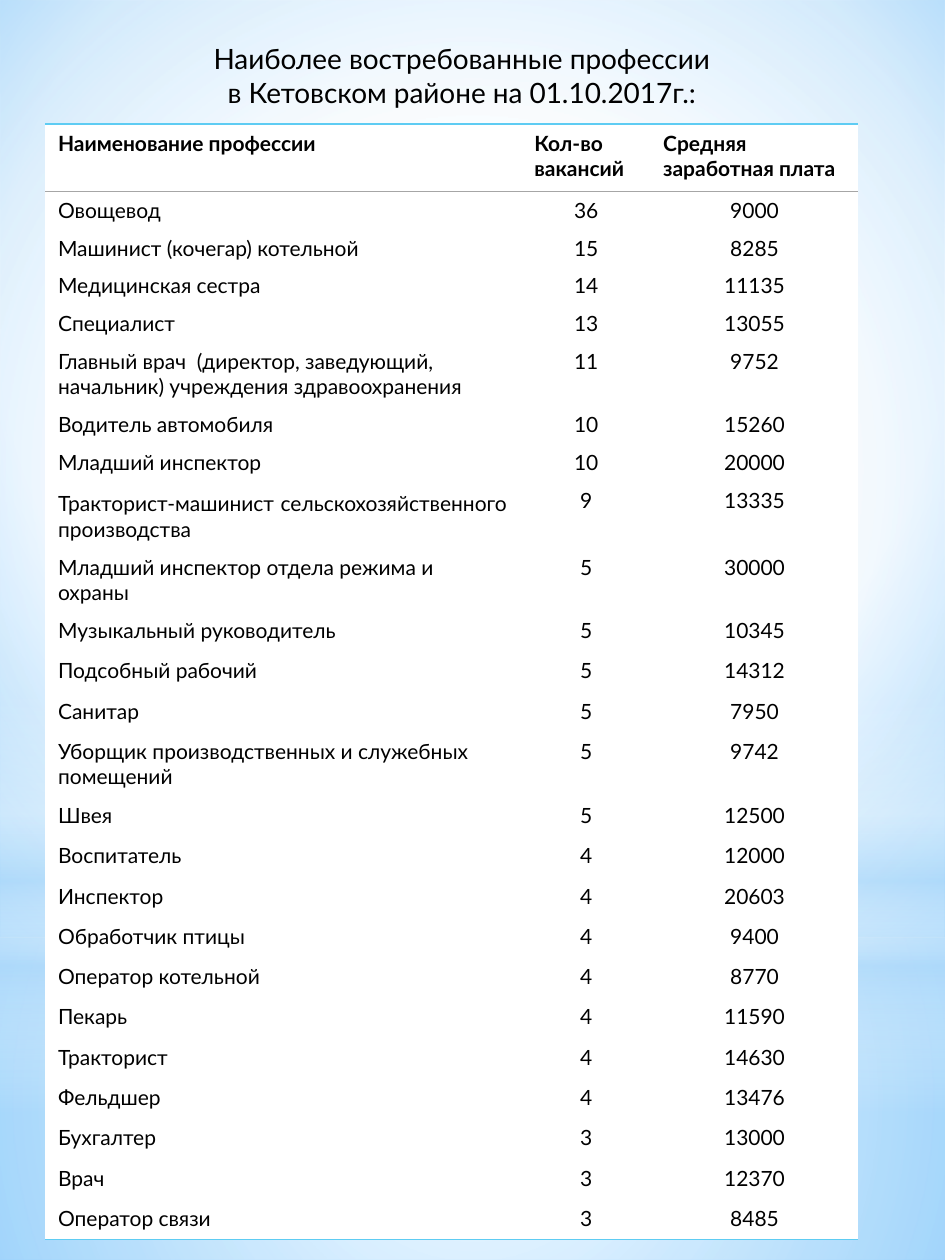
from pptx import Presentation
from pptx.dml.color import RGBColor
from pptx.enum.shapes import MSO_SHAPE as Shape
from pptx.enum.text import PP_ALIGN as Align
from pptx.oxml import parse_xml
from pptx.oxml.ns import nsdecls, qn
from pptx.util import Pt

FONT, BLACK, WHITE, PALE = "Lato", "000000", "FFFFFF", "B4DCFA"
CYAN, GREY = "5ECCF3", "A6A6A6"


def color(value):
    return RGBColor.from_string(value)


def set_gradient(properties, stops, direction):
    """Swap a solid fill for a gradient with (position, colour, opacity) stops."""
    stop_xml = "".join(
        f'<a:gs pos="{position * 1000}"><a:srgbClr val="{value}">'
        f'<a:alpha val="{opacity * 1000}"/></a:srgbClr></a:gs>'
        for position, value, opacity in stops)
    gradient = parse_xml(f'<a:gradFill {nsdecls("a")} rotWithShape="1">'
                         f'<a:gsLst>{stop_xml}</a:gsLst>{direction}</a:gradFill>')
    properties.replace(properties.find(qn("a:solidFill")), gradient)


deck = Presentation()
deck.slide_width, deck.slide_height = Pt(540), Pt(720)
page = deck.slides.add_slide(deck.slide_layouts[6])

# Background
CIRCLE = '<a:path path="circle"><a:fillToRect l="{}" t="{}" r="{}" b="{}"/></a:path>'
CENTERED = CIRCLE.format(50000, 50000, 50000, 50000)
DOWN = '<a:lin ang="5400000" scaled="0"/>'
page.background.fill.solid()
set_gradient(page.element.xpath(".//p:bgPr")[0],
             [(0, WHITE, 100), (60, WHITE, 100), (100, "5BB9FF", 100)],
             CIRCLE.format(20000, 10000, 20000, 60000))

# Sky layers: preset, left, top, width, height, stops, direction
layers = [
    (Shape.RECTANGLE, 0, 535.7, 540, 184.3,
     [(0, WHITE, 91), (37, WHITE, 76), (100, PALE, 79)], CENTERED),
    (Shape.RECTANGLE, 0, 0, 540, 535.7,
     [(0, WHITE, 89), (48, WHITE, 62), (100, PALE, 79)], CENTERED),
    (Shape.RECTANGLE, 0, 395.3, 540, 239.8,
     [(0, WHITE, 0), (29, WHITE, 30), (45, PALE, 40),
      (55, WHITE, 26), (65, PALE, 60), (100, WHITE, 0)], DOWN),
    (Shape.OVAL, 0, 167.8, 540, 535.7,
     [(0, WHITE, 100), (56, WHITE, 0)], CENTERED),
]
for preset, left, top, width, height, stops, direction in layers:
    layer = page.shapes.add_shape(preset, Pt(left), Pt(top), Pt(width), Pt(height))
    layer.shadow.inherit = False
    layer.line.fill.background()
    layer.fill.solid()
    set_gradient(layer.element.spPr, stops, direction)

# Title
title = page.shapes.add_textbox(Pt(26), Pt(20.2), Pt(476), Pt(46))
title.text_frame.word_wrap = True
title.text_frame.text = ("Наиболее востребованные профессии\n"
                         "в Кетовском районе на 01.10.2017г.:")
for para in title.text_frame.paragraphs:
    para.alignment = Align.CENTER
    para.font.name, para.font.size = FONT, Pt(16)
    para.font.color.rgb = color(BLACK)

# Table of vacancies
rows = [
    ("Наименование профессии", "Кол-во вакансий", "Средняя заработная плата"),
    ("Овощевод", 36, 9000),
    ("Машинист (кочегар) котельной", 15, 8285),
    ("Медицинская сестра", 14, 11135),
    ("Специалист", 13, 13055),
    ("Главный врач  (директор, заведующий, начальник) учреждения здравоохранения",
     11, 9752),
    ("Водитель автомобиля", 10, 15260),
    ("Младший инспектор", 10, 20000),
    ("Тракторист-машинист сельскохозяйственного производства", 9, 13335),
    ("Младший инспектор отдела режима и охраны", 5, 30000),
    ("Музыкальный руководитель", 5, 10345),
    ("Подсобный рабочий", 5, 14312),
    ("Санитар", 5, 7950),
    ("Уборщик производственных и служебных помещений", 5, 9742),
    ("Швея", 5, 12500),
    ("Воспитатель", 4, 12000),
    ("Инспектор", 4, 20603),
    ("Обработчик птицы", 4, 9400),
    ("Оператор котельной", 4, 8770),
    ("Пекарь", 4, 11590),
    ("Тракторист", 4, 14630),
    ("Фельдшер", 4, 13476),
    ("Бухгалтер", 3, 13000),
    ("Врач", 3, 12370),
    ("Оператор связи", 3, 8485),
]
two_line_rows = {5: 36, 8: 38.4, 9: 36, 13: 36.6}
last = len(rows) - 1
# Edges by row, bottom before top: tag, colour, width
edges = {0: [("lnB", GREY, 0.5), ("lnT", CYAN, 1)], last: [("lnB", CYAN, 1)]}

frame = page.shapes.add_table(len(rows), 3, Pt(26), Pt(70.8), Pt(464.6), Pt(625.7))
table = frame.table
table.horz_banding = False
NO_STYLE = "{2D5ABB26-0587-4C30-8999-92F81FD0307C}"
table._tbl.tblPr.find(qn("a:tableStyleId")).text = NO_STYLE
for column, width in zip(table.columns, (272.2, 73.6, 118.8)):
    column.width = Pt(width)

for row_index, values in enumerate(rows):
    single_line = 21.6 if row_index < 10 else 23.04
    height = 38.4 if row_index == 0 else two_line_rows.get(row_index, single_line)
    table.rows[row_index].height = Pt(height)
    for column_index, value in enumerate(values):
        cell = table.cell(row_index, column_index)
        cell.fill.solid()
        cell.fill.fore_color.rgb = color(WHITE)
        para = cell.text_frame.paragraphs[0]
        para.font.name, para.font.size = FONT, Pt(12)
        para.font.bold = row_index == 0
        para.font.color.rgb = color(BLACK)
        if row_index and column_index:
            para.alignment = Align.CENTER
        if row_index == 8 and column_index == 0:
            # Larger spaces between the words of this profession
            for word_index, word in enumerate(value.split()):
                if word_index:
                    span = para.add_run()
                    span.text = " "
                    span.font.size = Pt(14)
                para.add_run().text = word
        else:
            para.add_run().text = str(value)
        for tag, edge_color, edge_width in edges.get(row_index, []):
            cell._tc.get_or_add_tcPr().insert(0, parse_xml(
                f'<a:{tag} {nsdecls("a")} w="{Pt(edge_width)}"><a:solidFill>'
                f'<a:srgbClr val="{edge_color}"/></a:solidFill></a:{tag}>'))

deck.save("out.pptx")
